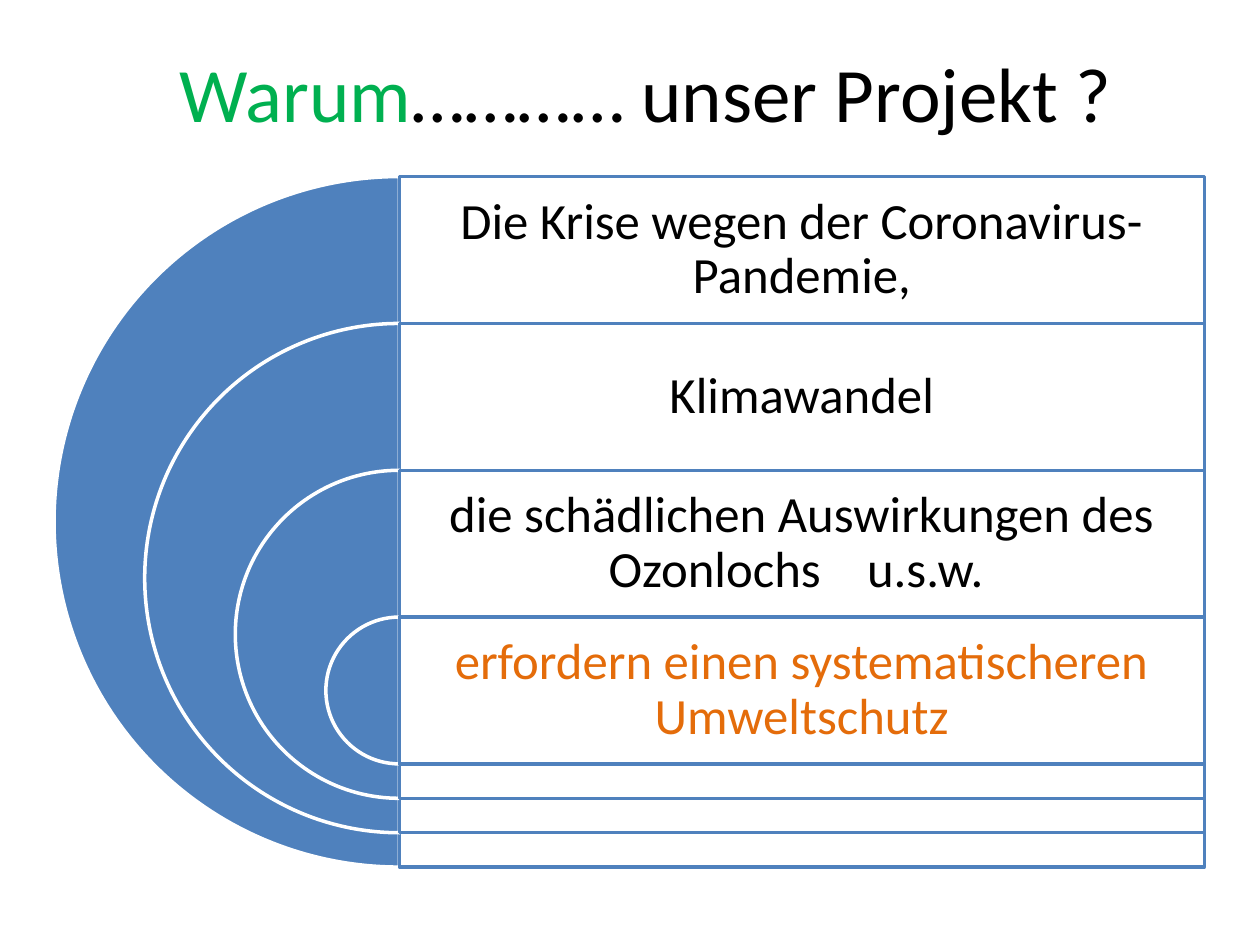
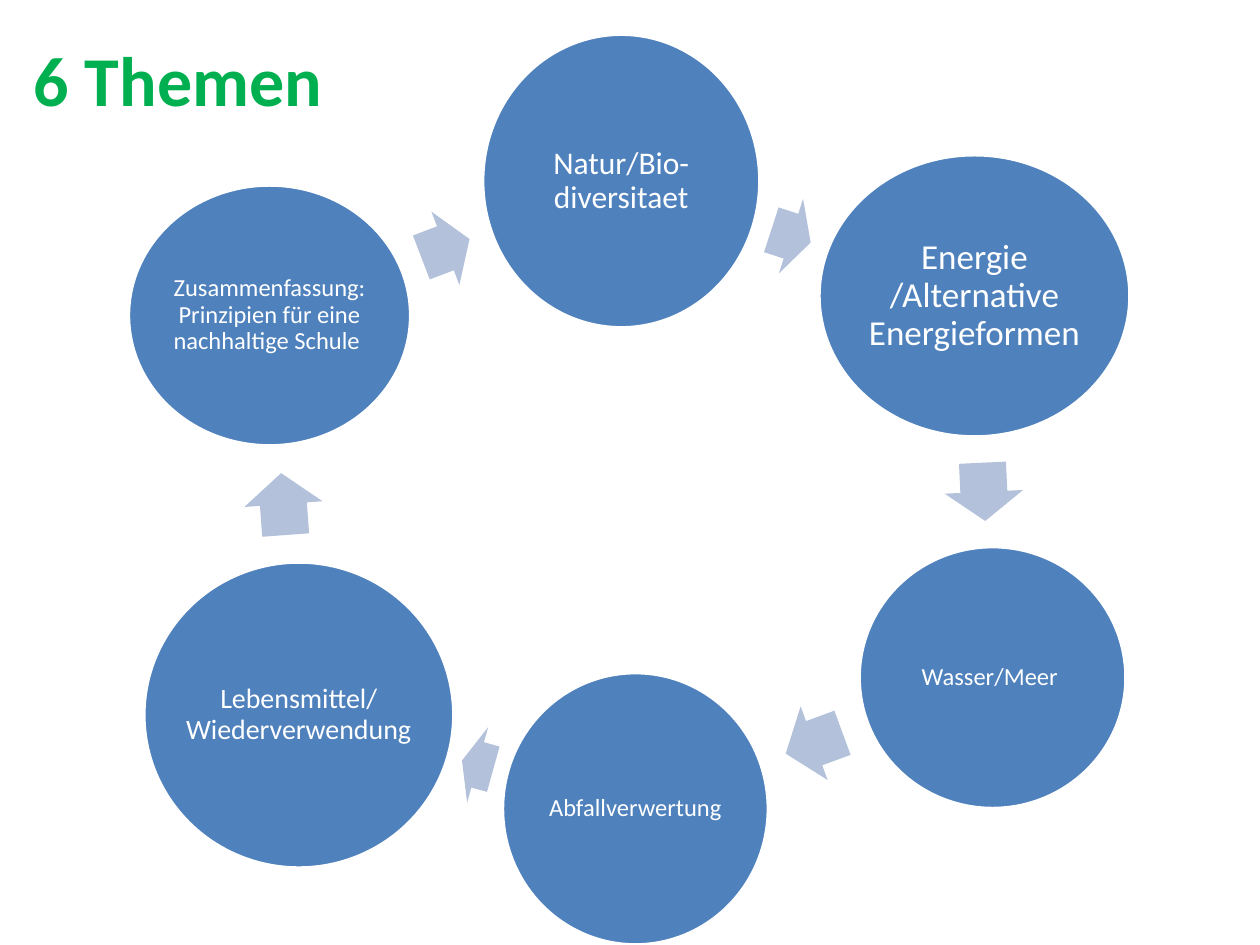
from dataclasses import dataclass
from math import atan2, cos, degrees, hypot, sin

from lxml import etree
from pptx import Presentation
from pptx.dml.color import RGBColor
from pptx.enum.shapes import MSO_SHAPE
from pptx.enum.text import MSO_ANCHOR, PP_ALIGN
from pptx.oxml.ns import qn
from pptx.util import Cm, Pt

PIE, RECT = MSO_SHAPE.PIE, MSO_SHAPE.RECTANGLE
OVAL, ARROW = MSO_SHAPE.OVAL, MSO_SHAPE.RIGHT_ARROW
MIDDLE, TOP = MSO_ANCHOR.MIDDLE, MSO_ANCHOR.TOP
CENTER, LEFT = PP_ALIGN.CENTER, PP_ALIGN.LEFT


@dataclass(frozen=True)
class Theme:
    font: str = "Calibri"
    blue: str = "4F81BD"
    pale_blue: str = "B3C1DB"
    green: str = "00B050"
    orange: str = "E46C0A"
    black: str = "000000"
    white: str = "FFFFFF"
    title_size: int = 44
    heading_size: int = 40
    reason_size: int = 29
    line_width: int = 2
    line_spacing: float = 0.9


THEME = Theme()


@dataclass(frozen=True)
class Box:
    """A region in centimetres."""
    left: float
    top: float
    width: float
    height: float

    @property
    def center(self):
        return self.left + self.width / 2, self.top + self.height / 2

    def lengths(self):
        return [Cm(value) for value in (self.left, self.top, self.width, self.height)]

    def radius_towards(self, angle):
        """Distance from the centre to the edge of the inscribed ellipse."""
        return 1 / hypot(2 * cos(angle) / self.width, 2 * sin(angle) / self.height)


REASONS = [
    (["Die Krise wegen der Coronavirus-Pandemie,"], THEME.black),
    (["Klimawandel"], THEME.black),
    (["die schädlichen Auswirkungen des Ozonlochs", " ", "u.s.w. "], THEME.black),
    (["erfordern einen systematischeren Umweltschutz"], THEME.orange),
]
WIDE_SPACE = 19.7  # extra points after the space before "u.s.w."

# Text, type size and circle, clockwise from the top
TOPICS = [
    ("Natur/Bio-diversitaet", 18, Box(9.73, 0.69, 5.59, 5.92)),
    ("Energie /Alternative Energieformen", 20, Box(16.51, 3.12, 6.27, 5.69)),
    ("Wasser/Meer ", 14, Box(17.32, 11.02, 5.38, 5.28)),
    ("Abfallverwertung", 14, Box(10.13, 13.56, 5.36, 5.49)),
    ("Lebensmittel/\nWiederverwendung", 16, Box(2.9, 11.33, 6.25, 6.17)),
    ("Zusammenfassung: Prinzipien für eine nachhaltige Schule ", 14,
     Box(2.59, 3.73, 5.69, 5.26)),
]
ARROW_HEIGHT = 1.58
ARROW_SHARE = 0.53  # part of the gap between circles that an arrow fills


def add_figure(page, kind, box, fill, line=None):
    figure = page.shapes.add_shape(kind, *box.lengths())
    figure.shadow.inherit = False
    figure.fill.solid()
    figure.fill.fore_color.rgb = RGBColor.from_string(fill)
    if line:
        figure.line.color.rgb = RGBColor.from_string(line)
        figure.line.width = Pt(THEME.line_width)
    else:
        figure.line.fill.background()
    return figure


def set_opacity(figure, percent):
    color = figure.fill._xPr.find(qn("a:solidFill"))[0]
    etree.SubElement(color, qn("a:alpha")).set("val", str(percent * 1000))


def write(shape, spans, size, align=CENTER, anchor=MIDDLE, inset=None, spacing=None):
    """Write one paragraph of (text, colour) spans and return its runs.

    Text with its own line breaks is not wrapped any further.
    """
    frame = shape.text_frame
    frame.word_wrap = not any("\n" in text for text, _ in spans)
    frame.vertical_anchor = anchor
    if inset is not None:
        frame.margin_left = frame.margin_right = Cm(inset)
        frame.margin_top = frame.margin_bottom = Cm(inset)
    para = frame.paragraphs[0]
    para.alignment = align
    para.line_spacing = spacing
    for text, color in spans:
        for number, line in enumerate(text.split("\n")):
            if number:
                para.add_line_break()
            span = para.add_run()
            span.text = line
            span.font.name = THEME.font
            span.font.size = Pt(size)
            span.font.color.rgb = RGBColor.from_string(color)
    return para.runs


def add_text(page, box, spans, size, **style):
    return write(page.shapes.add_textbox(*box.lengths()), spans, size, **style)


def add_reasons(page, box):
    """Nested half circles, each joined to a row that holds a reason."""
    row_height = 2.96
    shrink = (box.height - row_height) / (len(REASONS) - 1)
    radius = box.height / 2
    row_left = box.left + radius
    row_width = box.width - radius
    for index, (texts, color) in enumerate(REASONS):
        top = box.top + index * row_height
        size = box.height - index * shrink

        # Half circle
        half = add_figure(page, PIE, Box(row_left - size / 2, top, size, size),
                          THEME.blue, THEME.white)
        half.adjustments[0], half.adjustments[1] = 54, 162

        # Row and its text
        row = add_figure(page, RECT, Box(row_left, top, row_width, size),
                         THEME.white, THEME.blue)
        set_opacity(row, 90)
        spans = add_text(page, Box(row_left, top, row_width, row_height),
                         [(text, color) for text in texts], THEME.reason_size,
                         inset=0.3, spacing=THEME.line_spacing)
        for span in spans:
            if span.text == " ":
                span.font._element.set("spc", str(round(WIDE_SPACE * 100)))


def add_arrow_between(page, start, end):
    """Arrow centred in the gap between two circles."""
    (start_x, start_y), (end_x, end_y) = start.center, end.center
    angle = atan2(end_y - start_y, end_x - start_x)
    start_radius = start.radius_towards(angle)
    gap = (hypot(end_x - start_x, end_y - start_y)
           - start_radius - end.radius_towards(angle))
    reach = start_radius + gap / 2
    width = ARROW_SHARE * gap
    box = Box(start_x + reach * cos(angle) - width / 2,
              start_y + reach * sin(angle) - ARROW_HEIGHT / 2,
              width, ARROW_HEIGHT)
    arrow = add_figure(page, ARROW, box, THEME.pale_blue)
    arrow.adjustments[0], arrow.adjustments[1] = 0.6, 0.5
    arrow.rotation = degrees(angle) % 360


def add_topic_cycle(page):
    for index, (text, size, box) in enumerate(TOPICS):
        circle = add_figure(page, OVAL, box, THEME.blue, THEME.white)
        write(circle, [(text, THEME.white)], size,
              inset=0.05, spacing=THEME.line_spacing)
        next_box = TOPICS[(index + 1) % len(TOPICS)][2]
        add_arrow_between(page, box, next_box)


def build_reasons_page(page):
    add_text(page, Box(1.3, 0.76, 23.8, 2.16),
             [("Warum", THEME.green), ("………… unser Projekt ? ", THEME.black)],
             THEME.title_size)
    add_reasons(page, Box(1.09, 3.56, 23.19, 13.92))


def build_topics_page(page):
    add_topic_cycle(page)
    heading = add_text(page, Box(0.43, 0.61, 9.6, 1.96), [("6 Themen", THEME.green)],
                       THEME.heading_size, align=LEFT, anchor=TOP)
    heading[0].font.bold = True


def main():
    deck = Presentation()
    deck.slide_width, deck.slide_height = Cm(25.4), Cm(19.05)
    blank = deck.slide_layouts[6]
    for build_page in (build_reasons_page, build_topics_page):
        build_page(deck.slides.add_slide(blank))
    deck.save("out.pptx")


if __name__ == "__main__":
    main()
